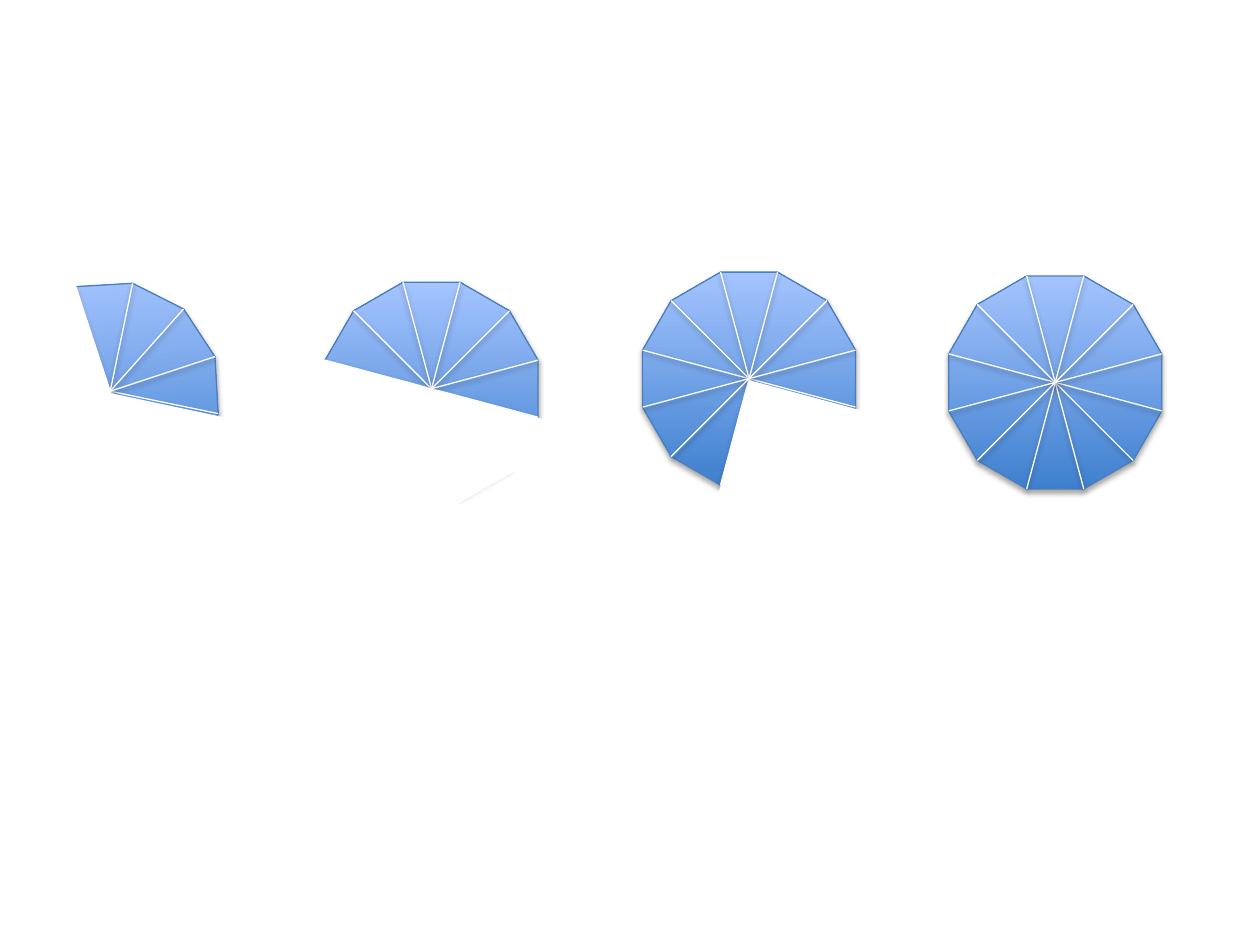
from math import cos, radians, sin

from lxml import etree
from pptx import Presentation
from pptx.dml.color import RGBColor
from pptx.enum.shapes import MSO_CONNECTOR, MSO_SHAPE
from pptx.oxml.ns import qn
from pptx.util import Inches, Pt

WHITE = RGBColor(0xFF, 0xFF, 0xFF)
EDGE_BLUE = RGBColor(0x4B, 0x7E, 0xBC)
DEEP_BLUE = RGBColor(0x3F, 0x80, 0xCE)
LIGHT_BLUE = RGBColor(0xA4, 0xC4, 0xFF)

SIDE = 1.69
RADIUS = SIDE / 2 / cos(radians(15))
TRIANGLE, SQUARE = MSO_SHAPE.RIGHT_TRIANGLE, MSO_SHAPE.RECTANGLE


def add_shadow(drawn, distance, opacity):
    effects = etree.SubElement(drawn._element.spPr, qn("a:effectLst"))
    shadow = etree.SubElement(
        effects, qn("a:outerShdw"), blurRad=str(Pt(3.1)), dist=str(Pt(distance)),
        dir="5400000", rotWithShape="0")
    black = etree.SubElement(shadow, qn("a:srgbClr"), val="000000")
    etree.SubElement(black, qn("a:alpha"), val=str(opacity * 1000))


# Each fan: left, top, tilt, covers as (kind, left, top, width, height, rotation, flipped)
fans = [
    (7.53, 2.19, 0, []),
    (0.03, 2.26, -3.3, [
        (TRIANGLE, 0.04, 1.35, 1.45, 2.83, 9.2, False),
        (TRIANGLE, 0.31, 1.7, 1.75, 2.97, 71.5, True),
    ]),
    (2.58, 2.24, 0, [(TRIANGLE, 2.46, 2.15, 1.85, 1.85, 330.2, False)]),
    (5.1, 2.16, 0, [(SQUARE, 5.81, 3.13, 0.94, 0.94, 15.1, False)]),
]

prs = Presentation()
prs.slide_width, prs.slide_height = Inches(10), Inches(7.5)
slide = prs.slides.add_slide(prs.slide_layouts[6])

for left, top, tilt, covers in fans:
    fan = slide.shapes.add_group_shape().shapes

    disc = fan.add_shape(MSO_SHAPE.DODECAGON, Inches(left), Inches(top),
                         Inches(SIDE), Inches(SIDE))
    disc.rotation = tilt
    disc.fill.gradient()
    disc.fill.gradient_angle = 90
    for stop, color in zip(disc.fill.gradient_stops, (DEEP_BLUE, LIGHT_BLUE)):
        stop.color.rgb = color
    disc.line.color.rgb = EDGE_BLUE
    disc.line.width = Pt(0.75)
    add_shadow(disc, 1.8, 35)

    center_x, center_y = left + SIDE / 2, top + SIDE / 2
    for step in range(6):
        angle = radians(15 + 30 * step + tilt)
        dx, dy = RADIUS * cos(angle), RADIUS * sin(angle)
        spoke = fan.add_connector(
            MSO_CONNECTOR.STRAIGHT,
            Inches(center_x - dx), Inches(center_y - dy),
            Inches(center_x + dx), Inches(center_y + dy))
        spoke.line.color.rgb = WHITE
        spoke.line.width = Pt(0.75)
        add_shadow(spoke, 1.6, 38)

    for kind, x, y, width, height, rotation, flipped in covers:
        cover = fan.add_shape(kind, Inches(x), Inches(y), Inches(width), Inches(height))
        cover.rotation = rotation
        cover.shadow.inherit = False
        cover.fill.solid()
        cover.fill.fore_color.rgb = WHITE
        if kind == SQUARE:
            cover.line.color.rgb = WHITE
            cover.line.width = Pt(0.75)
        else:
            cover.line.fill.background()
        if flipped:
            cover._element.spPr.find(qn("a:xfrm")).set("flipH", "1")

prs.save("out.pptx")
